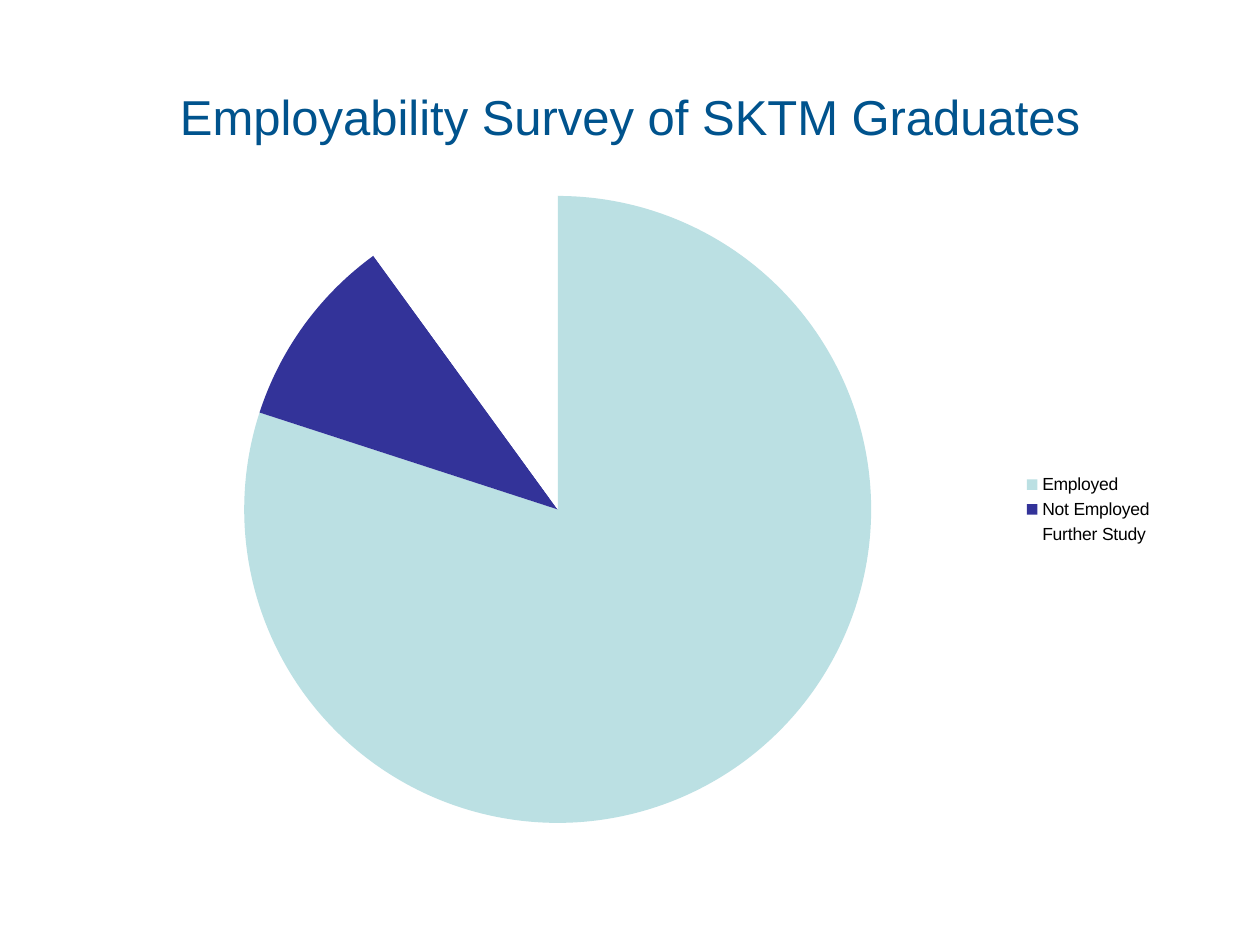
from pptx import Presentation
from pptx import util as u
from pptx.chart.data import CategoryChartData
from pptx.dml.color import RGBColor
from pptx.enum import chart as charts, text

COLOURS = {
    "title": "00538D",
    "text": "000000",
    "employed": "BBE0E3",
    "not_employed": "333399",
    "further_study": "FFFFFF",
}
SURVEY = [
    ("Employed", 80, "employed"),
    ("Not Employed", 10, "not_employed"),
    ("Further Study", 10, "further_study"),
]


class SlideBuilder:
    """Holds the shared style and the page being filled."""

    font_name = "Arial"

    def __init__(self, page):
        self.page = page

    def style_font(self, font, size, colour):
        font.name = self.font_name
        font.size = u.Pt(size)
        font.color.rgb = RGBColor.from_string(COLOURS[colour])

    def title(self, words, left, top, width, height):
        box = self.page.shapes.add_textbox(left, top, width, height)
        frame = box.text_frame
        frame.word_wrap = True
        frame.vertical_anchor = text.MSO_ANCHOR.MIDDLE
        para = frame.paragraphs[0]
        para.alignment = text.PP_ALIGN.CENTER
        span = para.add_run()
        span.text = words
        self.style_font(span.font, 28, "title")

    def pie(self, name, rows, left, top, width, height):
        """Draw a pie from (category, value, colour key) rows."""
        data = CategoryChartData()
        data.categories = [category for category, _, _ in rows]
        data.add_series(name, [value for _, value, _ in rows])
        chart = self.page.shapes.add_chart(
            charts.XL_CHART_TYPE.PIE, left, top, width, height, data).chart
        self.style_font(chart.font, 10, "text")
        chart.has_title = False
        chart.has_legend = True
        chart.legend.position = charts.XL_LEGEND_POSITION.RIGHT
        chart.legend.include_in_layout = False
        plot = chart.plots[0]
        plot.vary_by_categories = True
        for index, (_, _, colour) in enumerate(rows):
            style = plot.series[0].points[index].format
            style.fill.solid()
            style.fill.fore_color.rgb = RGBColor.from_string(COLOURS[colour])
            style.line.fill.background()


def main():
    deck = Presentation()
    deck.slide_width, deck.slide_height = u.Cm(25.4), u.Cm(19.05)
    builder = SlideBuilder(deck.slides.add_slide(deck.slide_layouts[6]))
    left, width = u.Cm(1.9), u.Cm(21.6)
    builder.title("Employability Survey of SKTM Graduates",
                  left, u.Cm(1.7), width, u.Cm(1.27))
    builder.pie("Series 1", SURVEY, left, u.Cm(3.6), width, u.Cm(13.34))
    deck.save("out.pptx")


if __name__ == "__main__":
    main()
